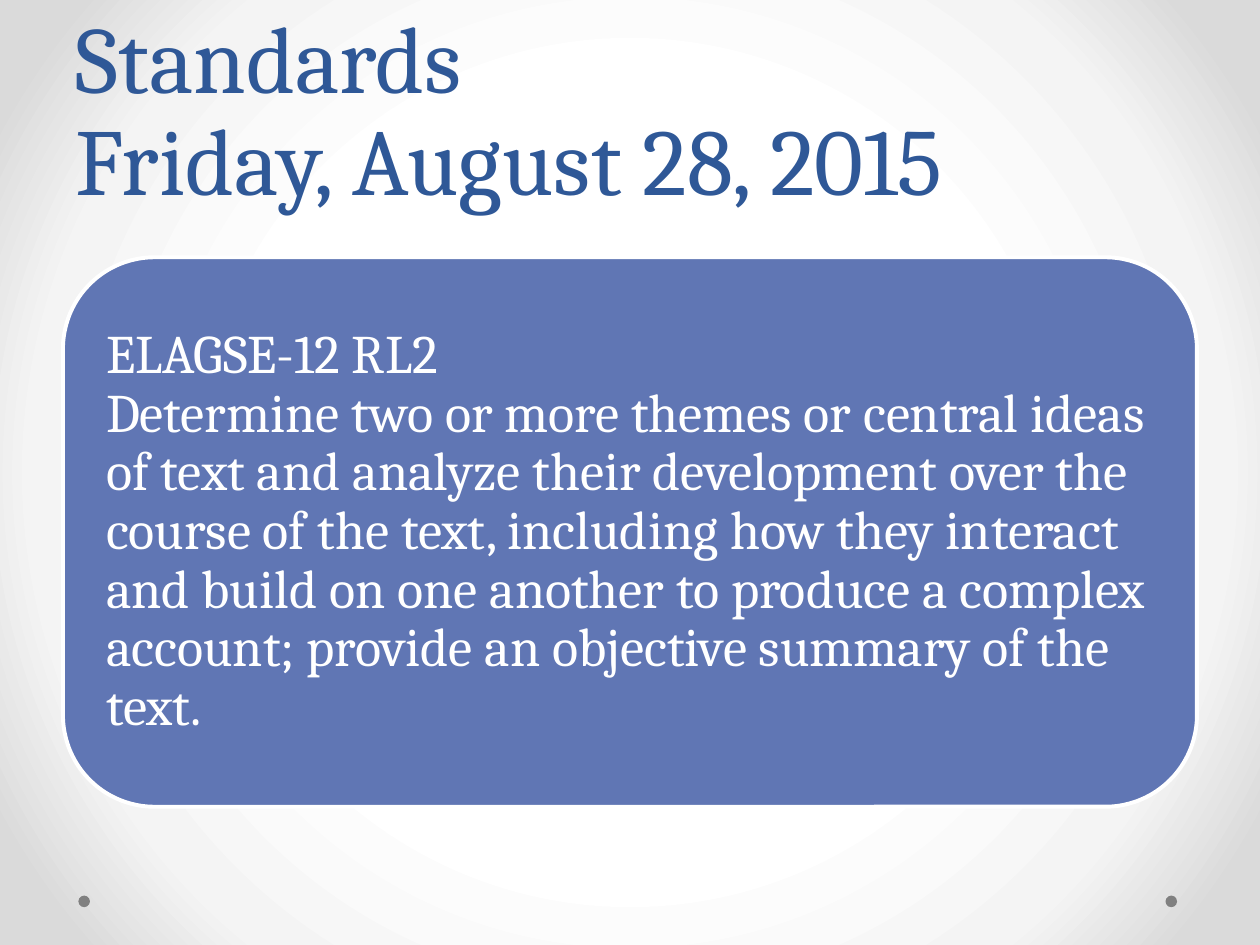
from dataclasses import dataclass

from lxml.etree import SubElement
from pptx import Presentation
from pptx.dml.color import RGBColor
from pptx.enum.shapes import MSO_SHAPE
from pptx.enum.text import MSO_ANCHOR, MSO_AUTO_SIZE, PP_ALIGN
from pptx.oxml.ns import qn
from pptx.util import Pt


@dataclass(frozen=True)
class Theme:
    """Hold the colours, font and type sizes of the deck."""
    font: str = "Cambria"
    title: str = "2F5897"
    panel: str = "6076B4"
    light: str = "FFFFFF"
    dot: str = "808080"
    title_size: int = 54
    body_size: int = 31
    backdrop: tuple = ((50, "FFFFFF"), (76, "F4F4F4"), (92, "DADADA"))


THEME = Theme()
TITLE = ("Standards", "Friday, August 28, 2015")
STANDARD = (
    "ELAGSE-12 RL2",
    "Determine two or more themes or central ideas of text and analyze their "
    "development over the course of the text, including how they interact and "
    "build on one another to produce a complex account; provide an objective "
    "summary of the text.",
)


def paint_background(page):
    """Fill the page with a circular gradient from its centre."""
    page.background.fill.gradient()
    gradient = next(page.element.iter(qn("a:gradFill")))
    for child in list(gradient):
        gradient.remove(child)
    stops = SubElement(gradient, qn("a:gsLst"))
    for position, color in THEME.backdrop:
        stop = SubElement(stops, qn("a:gs"), pos=str(position * 1000))
        SubElement(stop, qn("a:srgbClr"), val=color)
    circle = SubElement(gradient, qn("a:path"), path="circle")
    SubElement(circle, qn("a:fillToRect"), l="50000", t="50000", r="50000", b="50000")


def place(shape, box):
    """Move a shape to a box of left, top, width and height in points."""
    shape.left, shape.top, shape.width, shape.height = map(Pt, box)


def write_lines(frame, lines, size, color, spacing, anchor):
    """Write one left-aligned paragraph with line breaks."""
    frame.word_wrap = True
    frame.auto_size = MSO_AUTO_SIZE.NONE
    frame.vertical_anchor = anchor
    para = frame.paragraphs[0]
    for index, line in enumerate(lines):
        if index:
            para.add_line_break()
        para.add_run().text = line
    para.alignment = PP_ALIGN.LEFT
    para.line_spacing = spacing
    para.font.name = THEME.font
    para.font.size = Pt(size)
    para.font.color.rgb = RGBColor.from_string(color)


def add_filled_shape(page, kind, box, color):
    """Add a flat shape without an outline."""
    shape = page.shapes.add_shape(kind, *map(Pt, box))
    shape.shadow.inherit = False
    shape.fill.solid()
    shape.fill.fore_color.rgb = RGBColor.from_string(color)
    shape.line.fill.background()
    return shape


def add_corner_dots(page, box):
    """Put a dot at each end of the given strip."""
    left, top, width, height = box
    for dot_left in (left, left + width - height):
        add_filled_shape(page, MSO_SHAPE.OVAL, (dot_left, top, height, height), THEME.dot)


def add_title(page, box):
    """Place the title in its placeholder."""
    title = page.shapes.title
    place(title, box)
    write_lines(title.text_frame, TITLE, THEME.title_size, THEME.title, Pt(58), MSO_ANCHOR.BOTTOM)


def add_standard(page, box):
    """Add the rounded panel that states the standard."""
    panel = add_filled_shape(page, MSO_SHAPE.ROUNDED_RECTANGLE, box, THEME.panel)
    panel.line.color.rgb = RGBColor.from_string(THEME.light)
    panel.line.width = Pt(2.25)
    frame = panel.text_frame
    frame.margin_left = frame.margin_right = Pt(9.3)
    frame.margin_top = frame.margin_bottom = Pt(9.3)
    write_lines(frame, STANDARD, THEME.body_size, THEME.light, 0.9, MSO_ANCHOR.MIDDLE)


def main():
    """Build the standards page and save the deck."""
    deck = Presentation()
    deck.slide_width, deck.slide_height = Pt(720), Pt(540)
    page = deck.slides.add_slide(deck.slide_layouts.get_by_name("Title Only"))
    paint_background(page)
    add_corner_dots(page, (44.8, 511.8, 627.8, 6.6))
    add_title(page, (36, 0, 648, 126))
    add_standard(page, (36, 147, 648, 314))
    deck.save("out.pptx")


if __name__ == "__main__":
    main()
